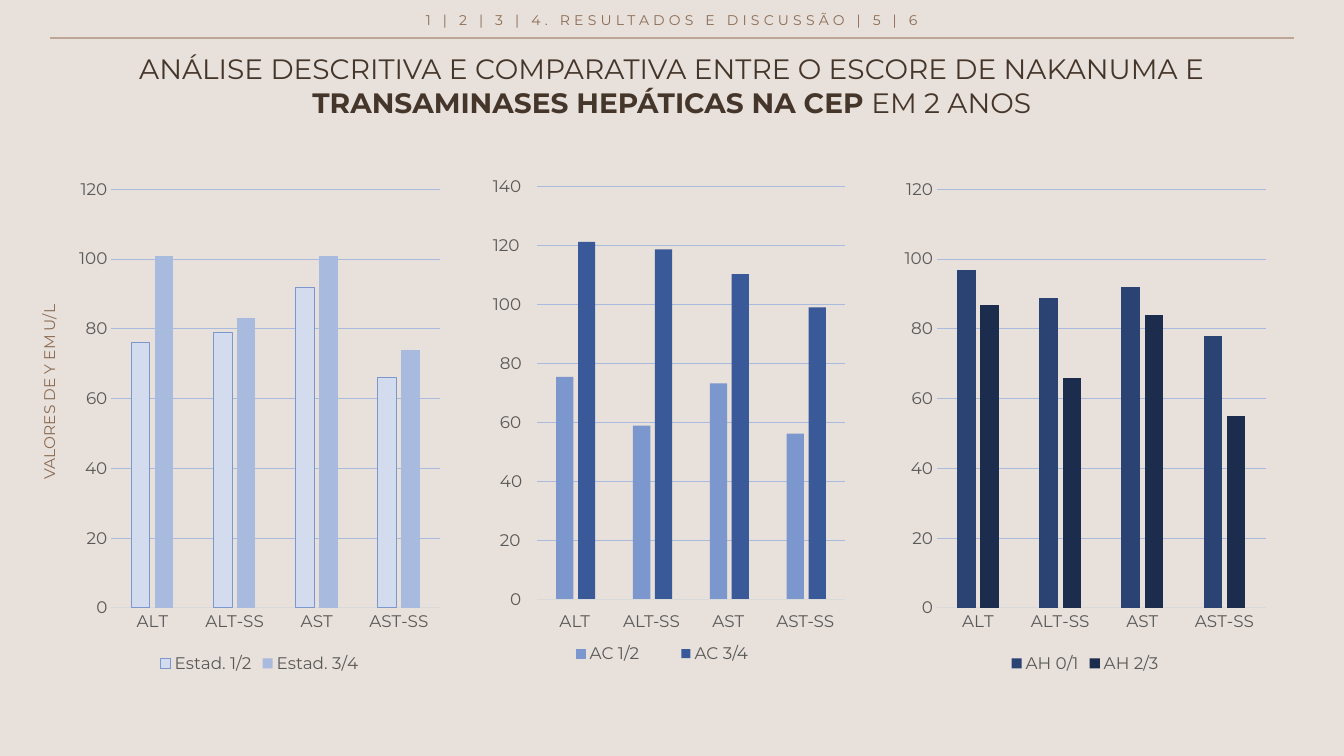
from dataclasses import dataclass

from pptx import Presentation, util as u
from pptx.chart.data import CategoryChartData
from pptx.dml.color import RGBColor
from pptx.enum import chart as charts, shapes, text

# Grid: one cell is a tenth of an inch
CELL = u.Inches(0.1)
COLUMNS, ROWS = 133.33, 75

FONT = "Montserrat"
SAND = RGBColor(0xE8, 0xE0, 0xDA)
RULE = RGBColor(0xBD, 0xA6, 0x95)
BROWN = RGBColor(0x8B, 0x6D, 0x56)
DARK_BROWN = RGBColor(0x45, 0x36, 0x2B)
GREY = RGBColor(0x59, 0x59, 0x59)
AXIS = RGBColor(0xD9, 0xD9, 0xD9)
PALE = RGBColor(0xD3, 0xDC, 0xEF)
LIGHT = RGBColor(0xA8, 0xBA, 0xDE)
MEDIUM = RGBColor(0x7C, 0x97, 0xCE)
BLUE = RGBColor(0x39, 0x59, 0x99)
DEEP = RGBColor(0x2B, 0x43, 0x73)
NAVY = RGBColor(0x1C, 0x2C, 0x4D)

CATEGORIES = ["ALT", "ALT-SS", "AST", "AST-SS"]
GAP, OVERLAP = 219, -27


@dataclass
class Box:
    left: float
    top: float
    width: float
    height: float

    def emu(self):
        return [cells(n) for n in (self.left, self.top, self.width, self.height)]


@dataclass
class Series:
    name: str
    values: list
    color: RGBColor
    outline: RGBColor = None


def cells(count):
    return round(count * CELL)


def style(font, size, color):
    font.name, font.size = FONT, u.Pt(size)
    font.color.rgb = color


def add_line(page, x1, y1, x2, y2, color, width=0.75):
    line = page.shapes.add_connector(
        shapes.MSO_CONNECTOR.STRAIGHT, *[cells(n) for n in (x1, y1, x2, y2)])
    line.line.color.rgb, line.line.width = color, u.Pt(width)
    properties = line._element.spPr
    properties.append(properties.makeelement(
        "{http://schemas.openxmlformats.org/drawingml/2006/main}effectLst", {}))


def add_text(page, box, spans, size, color, align=text.PP_ALIGN.LEFT, wrap=False, inset=False):
    shape = page.shapes.add_textbox(*box.emu())
    frame = shape.text_frame
    frame.word_wrap = wrap
    if not inset:
        frame.margin_left = frame.margin_right = frame.margin_top = frame.margin_bottom = 0
    if wrap:
        frame.vertical_anchor = text.MSO_ANCHOR.MIDDLE
    para = frame.paragraphs[0]
    para.alignment = align
    for words in spans:
        span = para.add_run()
        span.text = words
        style(span.font, size, color)
    return shape


def add_header(page, box):
    # Section trail and rule
    trail = add_text(page, Box(box.left, box.top, box.width, 2.5),
                     ["1 | 2 | 3 | 4. RESULTADOS E DISCUSSÃO | 5 | 6"],
                     10, BROWN, text.PP_ALIGN.CENTER, True, True)
    para = trail.text_frame.paragraphs[0]
    para.line_spacing = 0.9
    para.runs[0].font._element.set("spc", "300")
    add_line(page, box.left, box.top + 3, box.left + box.width, box.top + 3, RULE, 1.5)
    # Title with the key phrase in bold
    title = add_text(page, Box(box.left, box.top + 3.8, box.width, 7.7),
                     ["ANÁLISE DESCRITIVA E COMPARATIVA ENTRE O ESCORE DE NAKANUMA E ",
                      "TRANSAMINASES HEPÁTICAS NA CEP", " EM 2 ANOS"],
                     20, DARK_BROWN, text.PP_ALIGN.CENTER, True, True)
    title.text_frame.paragraphs[0].runs[1].font.bold = True


def add_axis_title(page, box):
    label = add_text(page, box, ["VALORES DE Y EM U/L"], 11, BROWN, inset=True)
    label.rotation = 270


def add_column_chart(page, box, series):
    data = CategoryChartData()
    data.categories = CATEGORIES
    for entry in series:
        data.add_series(entry.name, entry.values)
    chart = page.shapes.add_chart(
        charts.XL_CHART_TYPE.COLUMN_CLUSTERED, *box.emu(), data).chart
    style(chart.font, 10, RGBColor(0, 0, 0))
    chart.has_title = False
    chart.has_legend = True
    chart.legend.position = charts.XL_LEGEND_POSITION.BOTTOM
    chart.legend.include_in_layout = False
    style(chart.legend.font, 12, GREY)
    # Axes
    for axis in (chart.category_axis, chart.value_axis):
        axis.major_tick_mark = axis.minor_tick_mark = charts.XL_TICK_MARK.NONE
        style(axis.tick_labels.font, 12, GREY)
    chart.category_axis.format.line.color.rgb = AXIS
    chart.category_axis.format.line.width = u.Pt(0.75)
    values = chart.value_axis
    values.minimum_scale, values.maximum_scale, values.major_unit = 0, 120, 20
    values.format.line.fill.background()
    values.major_gridlines.format.line.color.rgb = LIGHT
    values.major_gridlines.format.line.width = u.Pt(0.75)
    # Columns
    plot = chart.plots[0]
    plot.gap_width, plot.overlap, plot.vary_by_categories = GAP, OVERLAP, False
    for bars, entry in zip(plot.series, series):
        bars.invert_if_negative = False
        bars.format.fill.solid()
        bars.format.fill.fore_color.rgb = entry.color
        if entry.outline:
            bars.format.line.color.rgb = entry.outline
            bars.format.line.width = u.Pt(0.75)


def add_drawn_chart(page, box, series, top_value=140, step=20):
    plot = Box(box.left + 4.4, box.top + 1.7, 30.5, 41)
    right, bottom = plot.left + plot.width, plot.top + plot.height
    pitch = plot.width / len(CATEGORIES)
    bar = pitch / (2 + (GAP - OVERLAP) / 100)
    ticks = [(value, bottom - plot.height * value / top_value)
             for value in range(0, top_value + 1, step)]
    # Gridlines
    for value, y in ticks[1:]:
        add_line(page, plot.left, y, right, y, LIGHT)
    # One outline of bars per series
    for index, entry in enumerate(series):
        first = plot.left + bar * GAP / 200 + index * bar * (1 - OVERLAP / 100)
        builder = None
        for place, value in enumerate(entry.values):
            x1, y1 = first + place * pitch, bottom - plot.height * value / top_value
            x2 = x1 + bar
            corners = [(cells(x), cells(y)) for x, y in
                       [(x1, y1), (x2, y1), (x2, bottom), (x1, bottom)]]
            if builder is None:
                builder = page.shapes.build_freeform(*corners[0])
            else:
                builder.move_to(*corners[0])
            builder.add_line_segments(corners[1:], close=True)
        paint(builder.convert_to_shape(), entry.color)
    # Axis line and labels
    add_line(page, plot.left, bottom, right, bottom, AXIS)
    label_widths = {1: 2.2, 2: 3.2, 3: 3.9}
    for value, y in ticks:
        width = label_widths[len(str(value))]
        add_text(page, Box(plot.left - 0.5 - width, y - 1.1, width, 2.7), [str(value)], 12, GREY)
    for place, name in enumerate(CATEGORIES):
        width = 5.9 if "-" in name else 3.2
        left = plot.left + (place + 0.5) * pitch - width / 2 - 0.1
        add_text(page, Box(left, bottom + 1.1, width, 2), [name], 12, GREY,
                 text.PP_ALIGN.CENTER)
    # Legend
    for index, entry in enumerate(series):
        left = plot.left + 3.9 + index * 10.4
        key = page.shapes.add_shape(shapes.MSO_SHAPE.RECTANGLE,
                                    *Box(left, bottom + 4.9, 0.9, 0.9).emu())
        paint(key, entry.color, entry.outline)
        add_text(page, Box(left + 1.3, bottom + 4.3, 5.3, 2), [entry.name], 12, GREY)


def paint(shape, color, outline=None):
    shape.shadow.inherit = False
    shape.fill.solid()
    shape.fill.fore_color.rgb = color
    if outline:
        shape.line.color.rgb, shape.line.width = outline, u.Pt(0.75)
    else:
        shape.line.fill.background()


def main():
    deck = Presentation()
    deck.slide_width, deck.slide_height = cells(COLUMNS), cells(ROWS)
    page = deck.slides.add_slide(deck.slide_layouts[6])
    page.background.fill.solid()
    page.background.fill.fore_color.rgb = SAND

    add_header(page, Box(4.95, 0.8, 123.4, 11.5))
    add_axis_title(page, Box(-4.9, 37.3, 19.6, 2.9))
    add_column_chart(page, Box(7.1, 16.8, 37.3, 50.4), [
        Series("Estad. 1/2", [76, 79, 92, 66], PALE, MEDIUM),
        Series("Estad. 3/4", [101, 83, 101, 74], LIGHT)])
    add_drawn_chart(page, Box(48.9, 16.8, 34.9, 50.4), [
        Series("AC 1/2", [75.5, 59, 73.3, 56.3], MEDIUM, MEDIUM),
        Series("AC 3/4", [121.2, 118.7, 110.3, 99], BLUE)])
    add_column_chart(page, Box(89, 16.8, 37.3, 50.4), [
        Series("AH 0/1", [97, 89, 92, 78], DEEP),
        Series("AH 2/3", [87, 66, 84, 55], NAVY)])
    deck.save("out.pptx")


if __name__ == "__main__":
    main()
